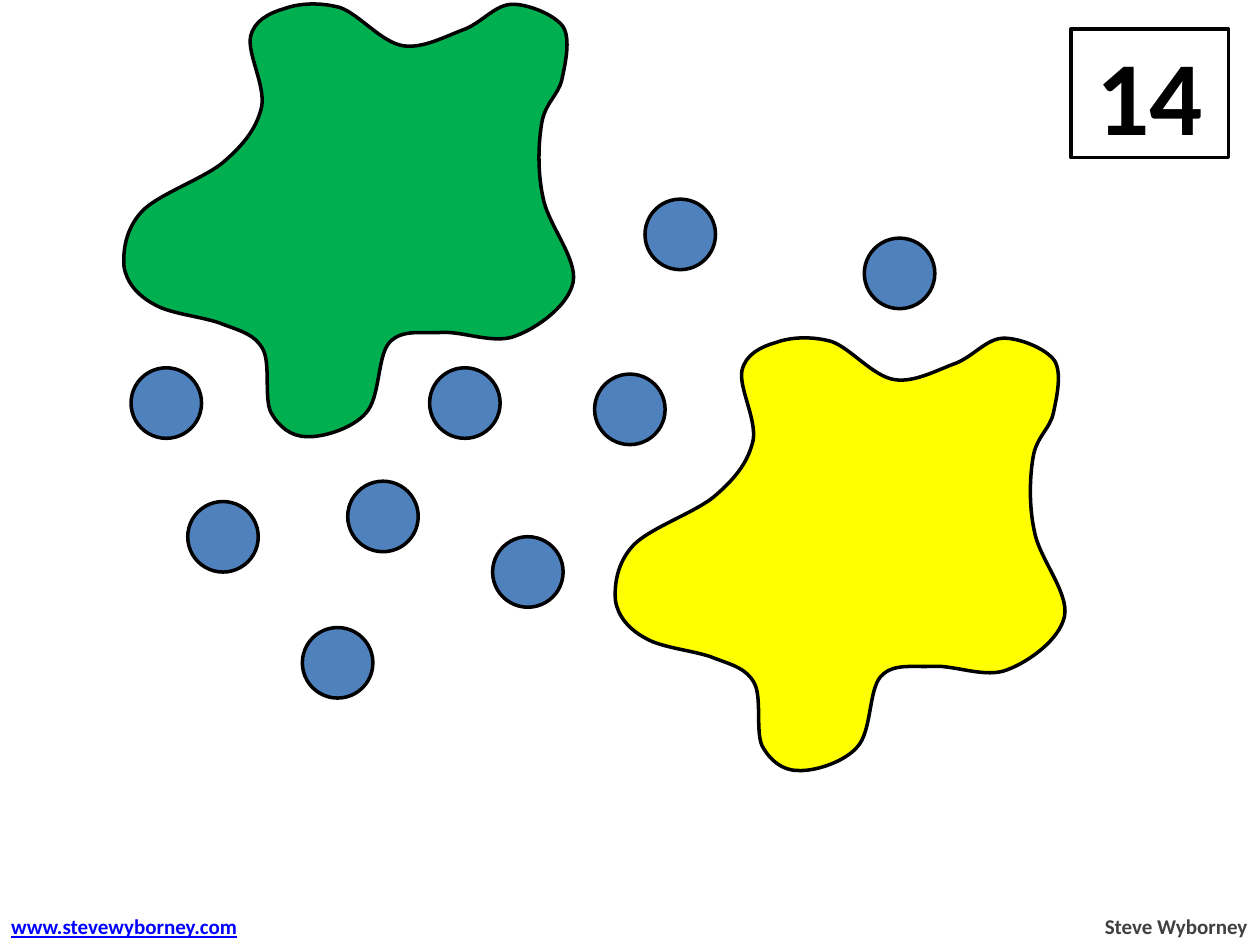
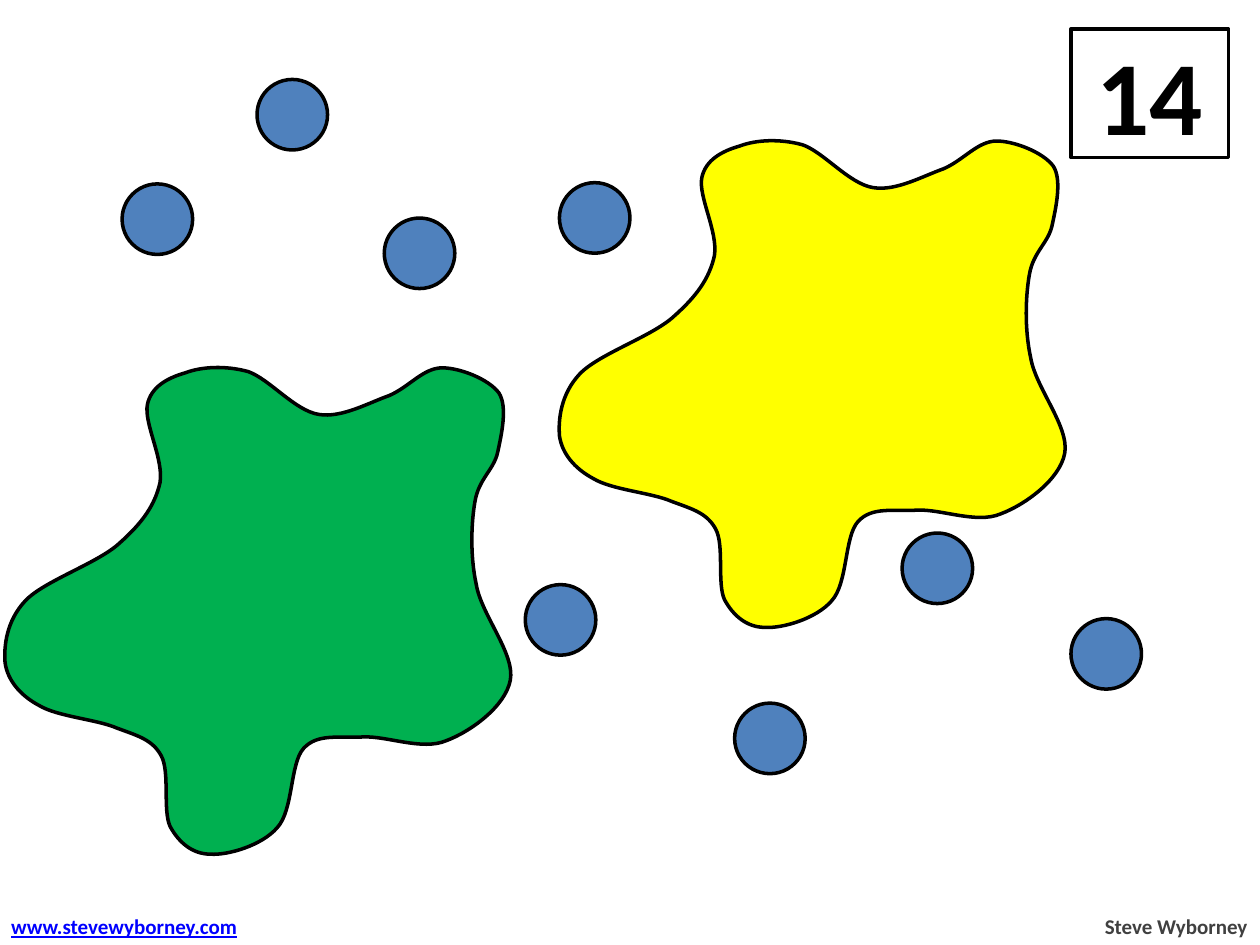
from lxml import etree
from pptx import Presentation
from pptx.dml.color import RGBColor
from pptx.enum.shapes import MSO_SHAPE
from pptx.enum.text import MSO_ANCHOR, MSO_AUTO_SIZE, PP_ALIGN
from pptx.oxml.ns import qn
from pptx.util import Pt

RECTANGLE, OVAL = MSO_SHAPE.RECTANGLE, MSO_SHAPE.OVAL
LEFT, CENTER, RIGHT = PP_ALIGN.LEFT, PP_ALIGN.CENTER, PP_ALIGN.RIGHT
MIDDLE = MSO_ANCHOR.MIDDLE
FIT_SHAPE = MSO_AUTO_SIZE.SHAPE_TO_FIT_TEXT

BLACK = RGBColor(0x00, 0x00, 0x00)
WHITE = RGBColor(0xFF, 0xFF, 0xFF)
GRAY = RGBColor(0x40, 0x40, 0x40)
LINK_BLUE = RGBColor(0x00, 0x00, 0xFF)
DOT_BLUE = RGBColor(0x4F, 0x81, 0xBD)
GREEN = RGBColor(0x00, 0xB0, 0x50)
YELLOW = RGBColor(0xFF, 0xFF, 0x00)

FONT = "Calibri"
OUTLINE = 2
DOT_SIZE = 40.3
TOTAL_BOX = (612, 16.6, 90, 73.4)
AUTHOR_BOX = (623.5, 518.4, 96.5, 21.6)
WEBSITE_BOX = (-0.7, 518.4, 144, 21.6)

# Splat outline: each row holds two control points and the end of a curve.
SPLAT_START = (27, 269)
SPLAT_CURVES = [
    ((12, 261), (2, 249), (0, 235)),
    ((-1, 222), (1, 202), (16, 186)),
    ((31, 170), (74, 156), (91, 140)),
    ((109, 124), (119, 110), (123, 92)),
    ((126, 73), (110, 45), (113, 30)),
    ((116, 16), (129, 9), (143, 5)),
    ((156, 0), (175, -1), (193, 4)),
    ((210, 10), (230, 35), (249, 38)),
    ((267, 41), (288, 29), (305, 23)),
    ((321, 16), (332, 1), (347, 1)),
    ((361, 1), (384, 10), (392, 21)),
    ((399, 32), (394, 54), (391, 68)),
    ((388, 82), (376, 89), (373, 107)),
    ((370, 124), (369, 150), (374, 173)),
    ((378, 197), (405, 228), (401, 249)),
    ((397, 270), (369, 290), (350, 297)),
    ((331, 305), (303, 293), (284, 294)),
    ((265, 295), (248, 291), (237, 303)),
    ((226, 315), (229, 352), (216, 366)),
    ((204, 380), (177, 388), (163, 387)),
    ((149, 387), (138, 378), (131, 365)),
    ((125, 352), (131, 322), (124, 309)),
    ((117, 296), (105, 293), (89, 287)),
    ((73, 280), (42, 278), SPLAT_START),
]

# Per slide: dot corners, points per splat unit, and splat corners by colour.
PUZZLES = [
    (
        [(368.6, 113.8), (493.9, 136.1), (74.9, 210.2), (245.5, 210.2),
         (339.8, 213.8), (107.3, 286.6), (198.7, 275), (281.5, 306.7),
         (172.8, 358.6)],
        0.64,
        [(GREEN, 70.9, 1.8), (YELLOW, 351.7, 192.6)],
    ),
    (
        [(146.9, 45.4), (69.8, 105.1), (219.6, 124.6), (319.7, 104.4),
         (515.5, 304.6), (612, 353.5), (419.8, 401.8), (300.2, 334.1)],
        0.72,
        [(GREEN, 2.9, 209.5), (YELLOW, 319.7, 79.9)],
    ),
]


def paint(shape, color):
    shape.shadow.inherit = False
    shape.fill.solid()
    shape.fill.fore_color.rgb = color
    shape.line.color.rgb = BLACK
    shape.line.width = Pt(OUTLINE)


def write(frame, text, size, color, align, underline=False):
    paragraph = frame.paragraphs[0]
    paragraph.alignment = align
    run = paragraph.add_run()
    run.text = text
    font = run.font
    font.name, font.size, font.bold = FONT, Pt(size), True
    font.color.rgb = color
    if underline:
        font.underline = True


def add_total(slide, box, total):
    card = slide.shapes.add_shape(RECTANGLE, *map(Pt, box))
    paint(card, WHITE)
    card.text_frame.vertical_anchor = MIDDLE
    write(card.text_frame, total, 60, BLACK, CENTER)


def add_footer_text(slide, box, text, color, align, underline=False):
    frame = slide.shapes.add_textbox(*map(Pt, box)).text_frame
    frame.word_wrap = False
    frame.auto_size = FIT_SHAPE
    write(frame, text, 12, color, align, underline)


def add_dots(slide, corners):
    for left, top in corners:
        dot = slide.shapes.add_shape(
            OVAL, Pt(left), Pt(top), Pt(DOT_SIZE), Pt(DOT_SIZE))
        paint(dot, DOT_BLUE)


def add_splat(slide, left, top, unit, color):
    """Draw the outline through its end points, then bend each segment."""
    ends = [end for _, _, end in SPLAT_CURVES]
    min_x = min(x for x, _ in ends)
    min_y = min(y for _, y in ends)
    builder = slide.shapes.build_freeform(*SPLAT_START, scale=Pt(unit))
    builder.add_line_segments(ends, close=True)
    splat = builder.convert_to_shape(Pt(left), Pt(top))
    segments = list(splat.element.iter(qn("a:lnTo")))
    for segment, curve in zip(segments, SPLAT_CURVES):
        segment.tag = qn("a:cubicBezTo")
        for index, (x, y) in enumerate(curve[:2]):
            control = etree.Element(
                qn("a:pt"), x=str(x - min_x), y=str(y - min_y))
            segment.insert(index, control)
    paint(splat, color)


def add_puzzle(deck, dots, unit, splats):
    slide = deck.slides.add_slide(deck.slide_layouts[6])
    add_total(slide, TOTAL_BOX, "14")
    add_footer_text(slide, AUTHOR_BOX, "Steve Wyborney", GRAY, RIGHT)
    add_footer_text(slide, WEBSITE_BOX, "www.stevewyborney.com",
                    LINK_BLUE, LEFT, underline=True)
    add_dots(slide, dots)
    for color, left, top in splats:
        add_splat(slide, left, top, unit, color)


def main():
    deck = Presentation()
    deck.slide_width, deck.slide_height = Pt(720), Pt(540)
    for puzzle in PUZZLES:
        add_puzzle(deck, *puzzle)
    deck.save("out.pptx")


if __name__ == "__main__":
    main()
